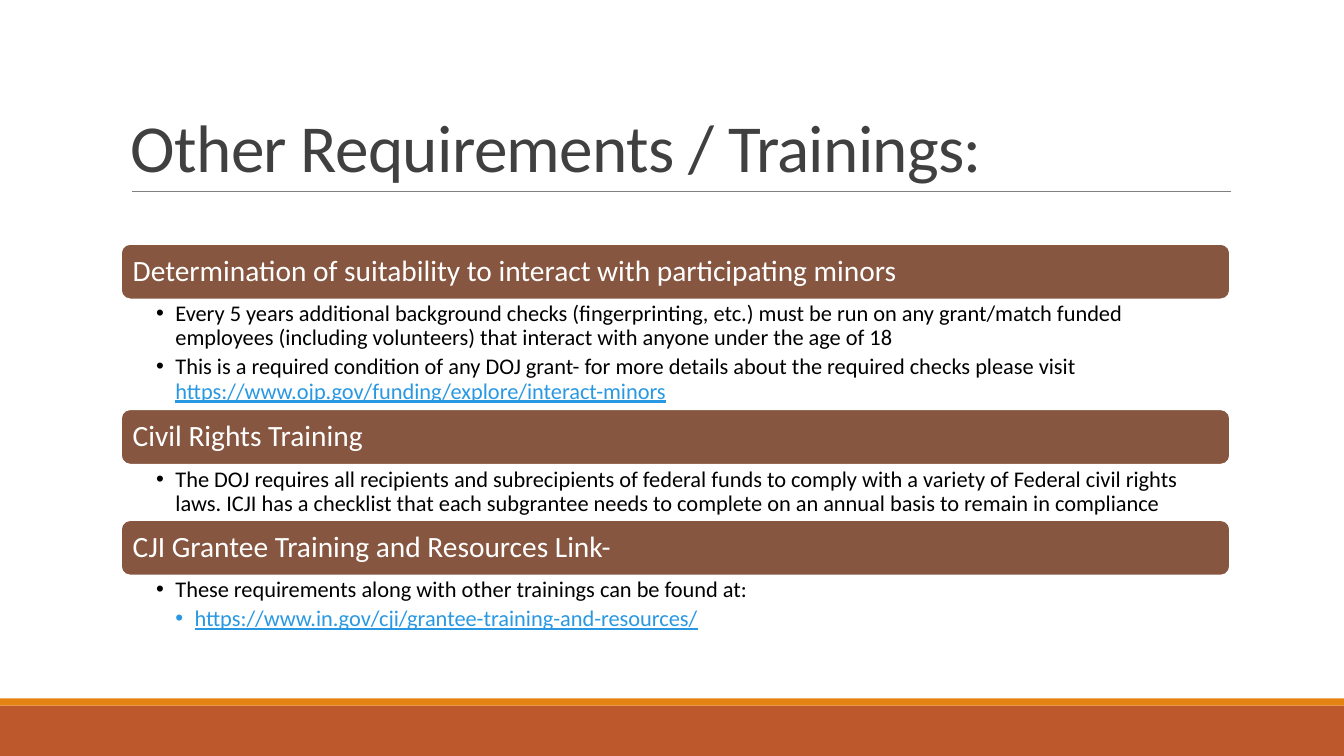
"""Build the slide on other requirements and trainings."""
from lxml.etree import SubElement
from pptx import Presentation
from pptx.dml.color import RGBColor as RGB
from pptx.enum.shapes import MSO_CONNECTOR as LINK, MSO_SHAPE as SHAPE
from pptx.enum.text import MSO_ANCHOR as ANCHOR, PP_ALIGN as ALIGN
from pptx.oxml.ns import qn
from pptx.util import Inches, Pt

WHITE = RGB(0xFF, 0xFF, 0xFF)
BLACK = RGB(0, 0, 0)
DARK = RGB(0x40, 0x40, 0x40)
GRAY = RGB(0x80, 0x80, 0x80)
BROWN = RGB(0x86, 0x56, 0x40)
RUST = RGB(0xBD, 0x58, 0x2C)
AMBER = RGB(0xE4, 0x83, 0x12)
BLUE = RGB(0x29, 0x98, 0xE3)

LEFT, WIDE, BAR = 1.2, 11, 0.55


def write(para, text, size=16, color=BLACK, space=0.9, after=0, level=0, track=0):
    """Add a run to a paragraph; web addresses become blue and underlined."""
    para.alignment = ALIGN.LEFT
    para.line_spacing = space
    para.space_after = Pt(after)
    run = para.add_run()
    run.text = text
    font = run.font
    font.name, font.size = "Calibri", Pt(size)
    web = text.startswith("https")
    font.underline = web
    font.color.rgb = BLUE if web else color
    if track:
        run._r.get_or_add_rPr().set("spc", str(track))
    props = para._p.get_or_add_pPr()
    if level and props.find(qn("a:buChar")) is None:
        props.set("marL", str(Inches(0.19 * level)))
        props.set("indent", str(Inches(-0.19)))
        SubElement(props, qn("a:buFont")).set("typeface", "Arial")
        SubElement(props, qn("a:buChar")).set("char", "•")


def block(kind, left, top, width, height, fill):
    """Add a filled shape without shadow or outline."""
    shape = slide.shapes.add_shape(
        kind, Inches(left), Inches(top), Inches(width), Inches(height))
    shape.shadow.inherit = False
    shape.fill.solid()
    shape.fill.fore_color.rgb = fill
    shape.line.fill.background()
    return shape


deck = Presentation()
deck.slide_width, deck.slide_height = Inches(13.33), Inches(7.5)
slide = deck.slides.add_slide(deck.slide_layouts[6])

block(SHAPE.RECTANGLE, 0, 7, 13.33, 0.5, RUST)
block(SHAPE.RECTANGLE, 0, 6.93, 13.33, 0.07, AMBER)

rule = slide.shapes.add_connector(
    LINK.STRAIGHT, Inches(1.31), Inches(1.9), Inches(12.21), Inches(1.9))
rule.line.color.rgb = GRAY
rule.line.width = Pt(0.5)
SubElement(rule._element.spPr, qn("a:effectLst"))

title = slide.shapes.add_textbox(
    Inches(LEFT), Inches(0.31), Inches(WIDE), Inches(1.59)).text_frame
title.word_wrap = True
title.vertical_anchor = ANCHOR.BOTTOM
write(title.paragraphs[0], "Other Requirements / Trainings:",
      size=48, color=DARK, space=0.85, track=-50)

topics = [
    (2.42, 1.09, "Determination of suitability to interact with participating minors", [
        (1, ["Every 5 years additional background checks (fingerprinting, etc.) must be "
             "run on any grant/match funded employees (including volunteers) that "
             "interact with anyone under the age of 18"]),
        (1, ["This is a required condition of any DOJ grant- for more details about the "
             "required checks please visit ",
             "https://www.ojp.gov/funding/explore/interact-minors"])]),
    (4.06, 0.55, "Civil Rights Training", [
        (1, ["The DOJ requires all recipients and subrecipients of federal funds to "
             "comply with a variety of Federal civil rights laws. ICJI has a checklist "
             "that each subgrantee needs to complete on an annual basis to remain in "
             "compliance"])]),
    (5.16, 0.61, "CJI Grantee Training and Resources Link-", [
        (1, ["These requirements along with other trainings can be found at:"]),
        (2, ["https://www.in.gov/cji/grantee-training-and-resources/"])]),
]

for top, tall, name, points in topics:
    bar = block(SHAPE.ROUNDED_RECTANGLE, LEFT, top, WIDE, BAR, BROWN)
    bar.line.color.rgb = WHITE
    bar.line.width = Pt(1.25)
    head = bar.text_frame
    head.word_wrap = True
    head.vertical_anchor = ANCHOR.MIDDLE
    head.margin_left = head.margin_right = Inches(0.09)
    write(head.paragraphs[0], name, size=21, color=WHITE)

    body = slide.shapes.add_textbox(
        Inches(LEFT), Inches(top + BAR), Inches(WIDE), Inches(tall)).text_frame
    body.word_wrap = True
    body.margin_left, body.margin_right = Inches(0.35), Inches(0.16)
    body.margin_top = body.margin_bottom = Inches(0.03)
    for i, (level, parts) in enumerate(points):
        para = body.add_paragraph() if i else body.paragraphs[0]
        for text in parts:
            write(para, text, after=3.5, level=level)

deck.save("out.pptx")
